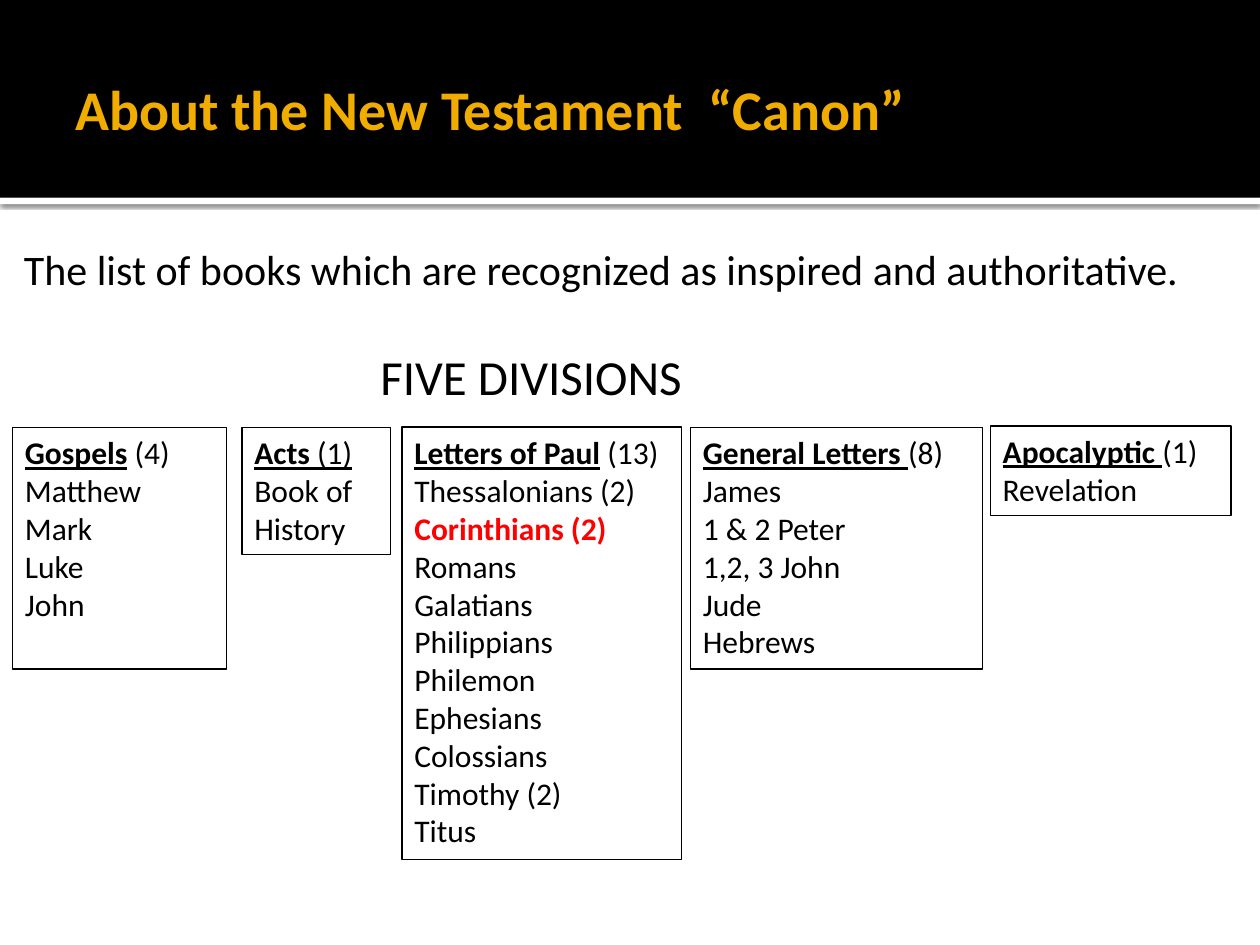
from lxml import etree
from pptx import Presentation
from pptx.dml.color import RGBColor
from pptx.enum.shapes import MSO_SHAPE
from pptx.enum.text import MSO_ANCHOR, PP_ALIGN
from pptx.oxml.ns import qn
from pptx.util import Inches, Pt

RECT = MSO_SHAPE.RECTANGLE
TOP, MIDDLE = MSO_ANCHOR.TOP, MSO_ANCHOR.MIDDLE
LEFT = PP_ALIGN.LEFT

BLACK, WHITE, GOLD, RED = "000000", "FFFFFF", "F0AD00", "FF0000"
BODY = {"size": Pt(18), "bold": False, "underline": False}
HEADING = {**BODY, "bold": True, "underline": True}

# Box (left, top, width, height), heading, count, count underlined, books
DIVISIONS = [
    ((0.1, 3.39, 1.7, 1.92), "Gospels", " (4)", False,
     ["Matthew", "Mark", "Luke", "John"]),
    ((1.92, 3.39, 1.18, 1.01), "Acts ", "(1)", True, ["Book of History"]),
    ((3.19, 3.39, 2.22, 3.43), "Letters of Paul", " (13)", False,
     ["Thessalonians (2)", "Corinthians (2)", "Romans", "Galatians",
      "Philippians", "Philemon", "Ephesians", "Colossians", "Timothy (2)",
      "Titus"]),
    ((5.48, 3.39, 2.32, 1.92), "General Letters ", "(8)", False,
     ["James", "1 & 2 Peter", "1,2, 3 John", "Jude", "Hebrews"]),
    ((7.86, 3.38, 1.91, 0.71), "Apocalyptic ", "(1)", False, ["Revelation"]),
]
HIGHLIGHT = "Corinthians (2)"


def rgb(value):
    return RGBColor.from_string(value)


def add_run(p, text, style, color=BLACK):
    r = p.add_run()
    r.text = text
    r.font.name = "Calibri"
    r.font.color.rgb = rgb(color)
    for name, value in style.items():
        setattr(r.font, name, value)


def set_frame(tf, anchor=TOP, **margins):
    tf.word_wrap = True
    tf.vertical_anchor = anchor
    for side, value in margins.items():
        setattr(tf, f"margin_{side}", Inches(value))


def add_rect(s, box, fill=None, line=None):
    sp = s.shapes.add_shape(RECT, *map(Inches, box))
    sp.shadow.inherit = False
    if fill:
        sp.fill.solid()
        sp.fill.fore_color.rgb = rgb(fill)
    else:
        sp.fill.background()
    if line:
        sp.line.color.rgb = rgb(line)
        sp.line.width = Pt(0.75)
    else:
        sp.line.fill.background()
    return sp


def add_shadow(sp):
    effects = sp._element.spPr.find(qn("a:effectLst"))
    shadow = etree.SubElement(
        effects, qn("a:outerShdw"), blurRad=str(Pt(2.5)), dist=str(Pt(0.8)),
        dir="5400000", algn="tl", rotWithShape="0")
    color = etree.SubElement(shadow, qn("a:srgbClr"), val=BLACK)
    etree.SubElement(color, qn("a:alpha"), val="60000")


def add_text(s, box, text, style, color=BLACK, **frame):
    sp = s.shapes.add_textbox(*map(Inches, box))
    set_frame(sp.text_frame, **frame)
    add_run(sp.text_frame.paragraphs[0], text, style, color)


def add_header(s, box):
    left, top, width, height = box
    # White rule with a soft shadow under the black band
    add_shadow(add_rect(s, (left, top + height, width, 0.05), WHITE))
    add_rect(s, box, BLACK)
    add_text(s, (left + 0.5, top + 0.17, width - 1, 1.37),
             "About the New Testament  “Canon”",
             {"size": Pt(32), "bold": True}, GOLD, anchor=MIDDLE, right=0.05)


def add_division(s, box, heading, count, count_underlined, books):
    tf = add_rect(s, box, line=BLACK).text_frame
    set_frame(tf)
    p = tf.paragraphs[0]
    p.alignment = LEFT
    add_run(p, heading, HEADING)
    add_run(p, count, {**BODY, "underline": count_underlined})
    for book in books:
        p = tf.add_paragraph()
        p.alignment = LEFT
        marked = book == HIGHLIGHT
        add_run(p, book, {**BODY, "bold": marked}, RED if marked else BLACK)


def main():
    prs = Presentation()
    prs.slide_width, prs.slide_height = Inches(10), Inches(7.5)
    s = prs.slides.add_slide(prs.slide_layouts[6])

    add_header(s, (0, 0, 10, 1.57))
    # Definition
    add_text(s, (0, 1.83, 10, 5.58),
             "The list of books which are recognized as inspired and "
             "authoritative.", {"size": Pt(24)}, left=0.19, top=0.1)
    # Five divisions
    for division in DIVISIONS:
        add_division(s, *division)
    add_text(s, (2.92, 2.7, 3.09, 0.57), "FIVE DIVISIONS", {"size": Pt(28)})

    prs.save("out.pptx")


if __name__ == "__main__":
    main()
